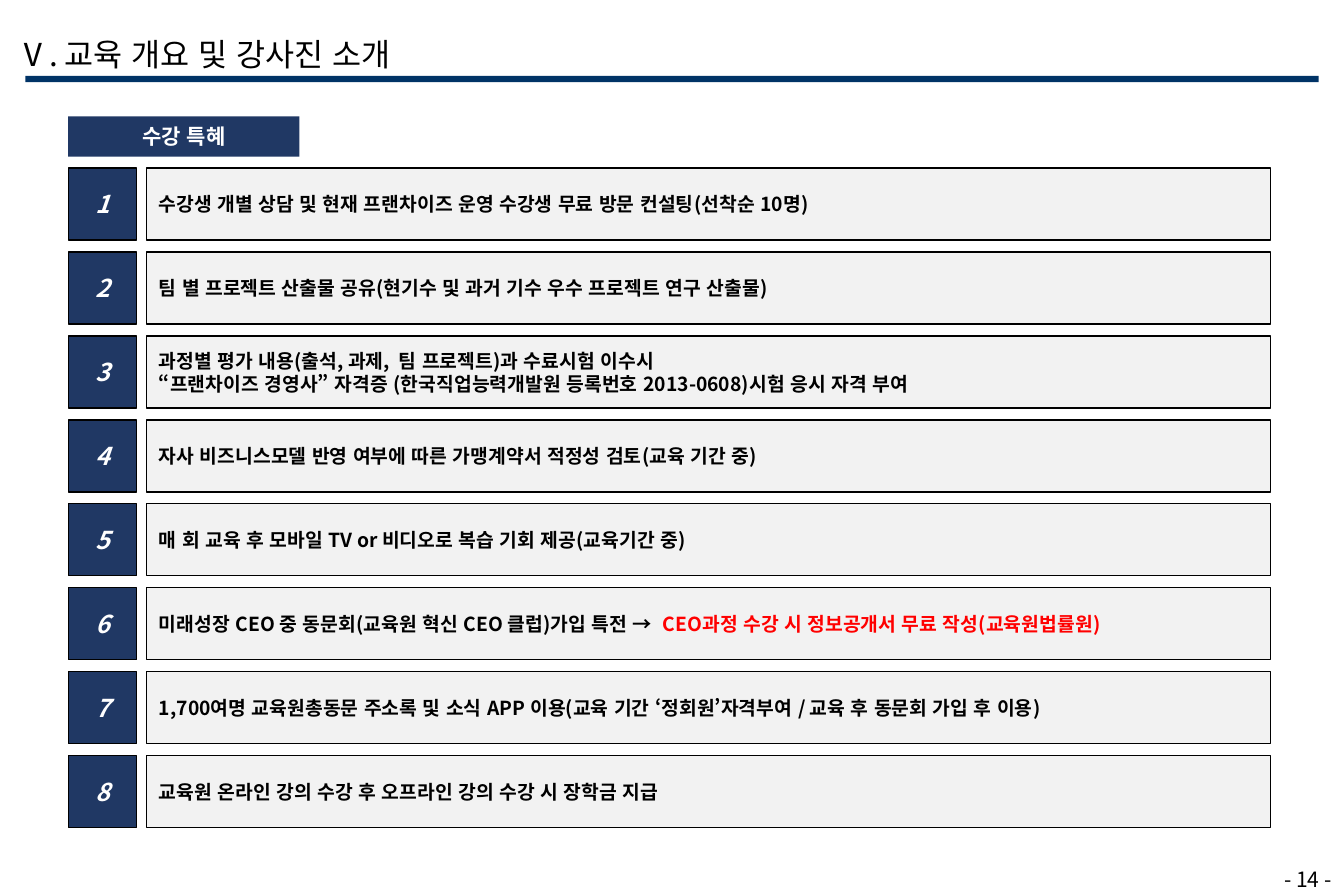
from dataclasses import dataclass
from lxml.etree import SubElement
from pptx import Presentation
from pptx.dml.color import RGBColor
from pptx.enum.lang import MSO_LANGUAGE_ID
from pptx.enum.shapes import MSO_SHAPE
from pptx.enum.text import MSO_ANCHOR, MSO_AUTO_SIZE, PP_ALIGN
from pptx.oxml.ns import qn
from pptx.util import Inches, Pt


@dataclass(frozen=True)
class Theme:
    """Colours, font and type sizes of the slide."""
    font: str = "Noto Sans CJK KR"
    ink: str = "000000"
    white: str = "FFFFFF"
    navy: str = "203864"
    rule: str = "003366"
    pale: str = "F2F2F2"
    red: str = "FF0000"
    title: int = 18
    num: int = 14
    head: int = 12
    body: int = 11


THEME = Theme()
WIDE, HIGH = Inches(10.64), Inches(7.09)
LEFT, TOP, STEP, TALL = 5.08, 18.76, 9.37, 8.04
NUM_WIDE, BAR_LEFT, BAR_WIDE = 5.08, 10.9, 83.65
HANG = Inches(0.37)
PERKS = [
    "수강생 개별 상담 및 현재 프랜차이즈 운영 수강생 무료 방문 컨설팅(선착순 10명)",
    "팀 별 프로젝트 산출물 공유(현기수 및 과거 기수 우수 프로젝트 연구 산출물)",
    "과정별 평가 내용(출석, 과제,  팀 프로젝트)과 수료시험 이수시\n"
    "“프랜차이즈 경영사” 자격증 (한국직업능력개발원 등록번호 2013-0608)시험 응시 자격 부여",
    "자사 비즈니스모델 반영 여부에 따른 가맹계약서 적정성 검토(교육 기간 중)",
    "매 회 교육 후 모바일 TV or 비디오로 복습 기회 제공(교육기간 중)",
    "미래성장 CEO 중 동문회(교육원 혁신 CEO 클럽)가입 특전 →  ",
    "1,700여명 교육원총동문 주소록 및 소식 APP 이용"
    "(교육 기간 ‘정회원’자격부여 / 교육 후 동문회 가입 후 이용)",
    "교육원 온라인 강의 수강 후 오프라인 강의 수강 시 장학금 지급",
]
BONUS_ROW = 5
BONUS = "CEO과정 수강 시 정보공개서 무료 작성(교육원법률원)"


def area(x, y, w, h):
    """Turn percent shares of the slide into lengths."""
    return (round(WIDE * x / 100), round(HIGH * y / 100),
            round(WIDE * w / 100), round(HIGH * h / 100))


def style(run, size, tint, bold=False, slant=False):
    """Format one run for Latin and Korean text."""
    font = run.font
    font.size, font.bold, font.italic = Pt(size), bold, slant
    font.color.rgb = RGBColor.from_string(tint)
    font.name = THEME.font
    font.language_id = MSO_LANGUAGE_ID.KOREAN
    SubElement(run._r.get_or_add_rPr(), qn("a:ea"), typeface=THEME.font)


def write(shape, text, size, tint, align=PP_ALIGN.LEFT, hang=0, **look):
    """Fill a shape with unwrapped, middle-anchored text."""
    frame = shape.text_frame
    frame.text = text
    frame.word_wrap = False
    frame.vertical_anchor = MSO_ANCHOR.MIDDLE
    for para in frame.paragraphs:
        para.alignment = align
        if hang:
            props = para._p.get_or_add_pPr()
            props.set("marL", str(hang))
            props.set("indent", str(-hang))
        for run in para.runs:
            style(run, size, tint, **look)


def block(slide, box, fill, edge=None):
    """Add a flat rectangle with an optional outline."""
    shape = slide.shapes.add_shape(MSO_SHAPE.RECTANGLE, *area(*box))
    shape.shadow.inherit = False
    shape.fill.solid()
    shape.fill.fore_color.rgb = RGBColor.from_string(fill)
    if edge:
        shape.line.color.rgb = RGBColor.from_string(edge)
        shape.line.width = Pt(0.75)
    else:
        shape.line.fill.background()
    return shape


def label(slide, box, text, size, align=PP_ALIGN.LEFT):
    """Add a plain line of text."""
    shape = slide.shapes.add_textbox(*area(*box))
    write(shape, text, size, THEME.ink, align)
    return shape


def perk(slide, row, text):
    """Add a numbered bar and return the bar."""
    top = TOP + row * STEP
    bar = block(slide, (BAR_LEFT, top, BAR_WIDE, TALL), THEME.pale, THEME.ink)
    write(bar, text, THEME.body, THEME.ink, hang=HANG, bold=True)
    badge = block(slide, (LEFT, top, NUM_WIDE, TALL), THEME.navy, THEME.ink)
    write(badge, str(row + 1), THEME.num, THEME.white, PP_ALIGN.CENTER,
          HANG, bold=True, slant=True)
    return bar


def main():
    """Build and save the slide."""
    deck = Presentation()
    deck.slide_width, deck.slide_height = WIDE, HIGH
    slide = deck.slides.add_slide(deck.slide_layouts[6])
    block(slide, (1.88, 8.46, 96.24, 0.71), THEME.rule)
    label(slide, (90.51, 96.33, 9.49, 3.67), "- 14 -", THEME.head, PP_ALIGN.RIGHT)
    title = label(slide, (0.38, 3.24, 32.42, 5.64),
                  "Ⅴ. 교육 개요 및 강사진 소개", THEME.title)
    title.text_frame.vertical_anchor = MSO_ANCHOR.TOP
    title.text_frame.auto_size = MSO_AUTO_SIZE.SHAPE_TO_FIT_TEXT
    head = block(slide, (LEFT, 12.98, 17.2, 4.51), THEME.navy)
    write(head, "수강 특혜", THEME.head, THEME.white, PP_ALIGN.CENTER, bold=True)
    bars = [perk(slide, row, text) for row, text in enumerate(PERKS)]
    bonus = bars[BONUS_ROW].text_frame.paragraphs[0].add_run()
    bonus.text = BONUS
    style(bonus, THEME.body, THEME.red, bold=True)
    deck.save("out.pptx")


if __name__ == "__main__":
    main()
